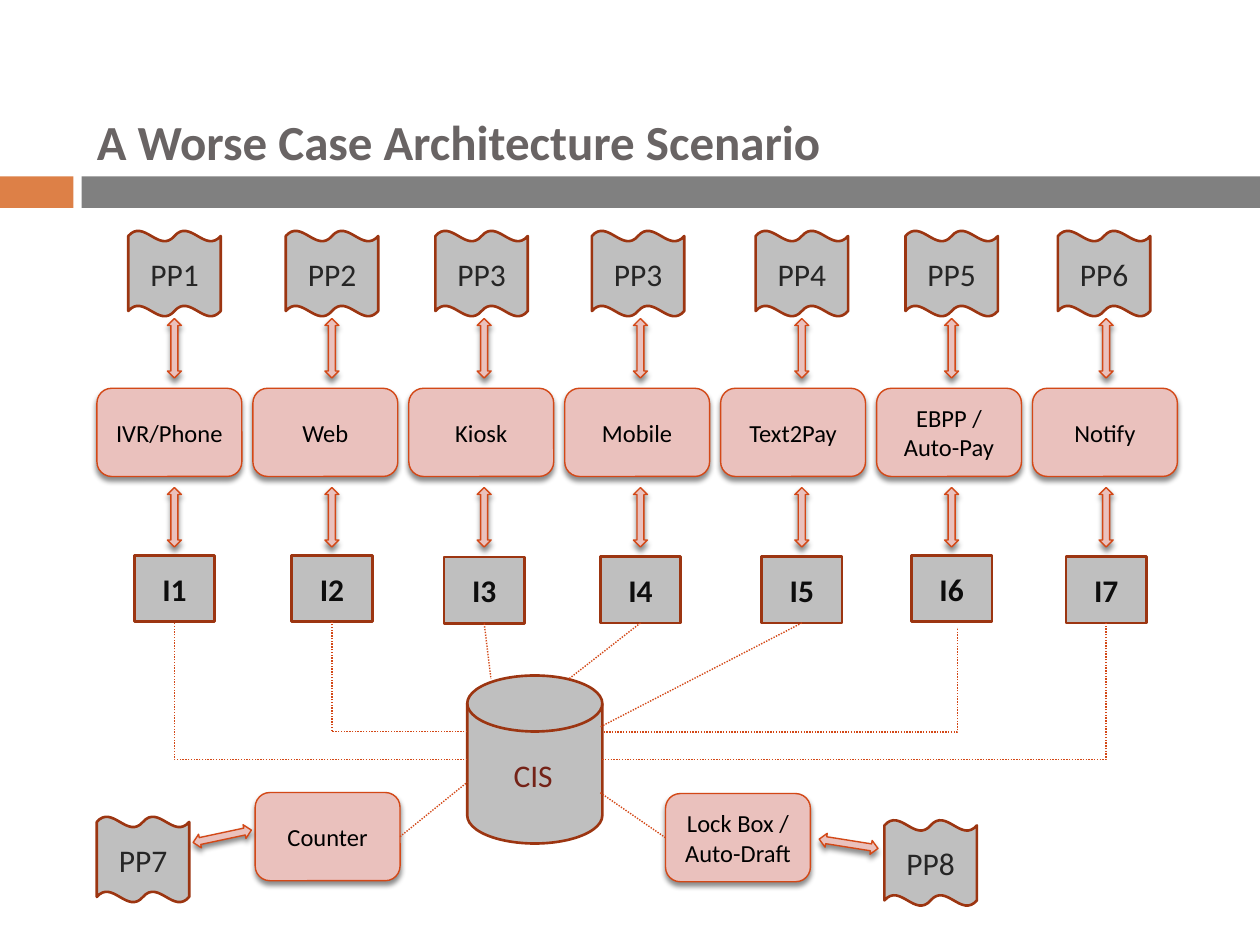
from typing import NamedTuple

from lxml.etree import SubElement
from pptx import Presentation
from pptx.dml.color import RGBColor
from pptx.enum.dml import MSO_LINE_DASH_STYLE as Dash
from pptx.enum.shapes import MSO_AUTO_SHAPE_TYPE as Kind, MSO_CONNECTOR_TYPE as Route
from pptx.enum.text import MSO_ANCHOR as Anchor, MSO_AUTO_SIZE as AutoSize, PP_ALIGN as Align
from pptx.oxml.ns import qn
from pptx.util import Pt

ORANGE = RGBColor(0xDD, 0x80, 0x47)
BAR_GRAY = RGBColor(0x80, 0x80, 0x80)
GRAY = RGBColor(0xBF, 0xBF, 0xBF)
PINK = RGBColor(0xEA, 0xC1, 0xBD)
RUST = RGBColor(0xD3, 0x48, 0x17)
DARK_RUST = RGBColor(0x9C, 0x35, 0x11)
MAROON = RGBColor(0x74, 0x22, 0x17)
TITLE_GRAY = RGBColor(0x69, 0x64, 0x64)
CHARCOAL = RGBColor(0x26, 0x26, 0x26)
NEAR_BLACK = RGBColor(0x0D, 0x0D, 0x0D)
BLACK = RGBColor(0, 0, 0)

THIN, THICK = 0.79, 1.5
CHANNEL_LEFT, CHANNEL_STEP, CHANNEL_WIDTH = 55.4, 89.1, 82.8


class Column(NamedTuple):
    page: str
    channel: str
    interface: str
    center: float
    page_center: float
    interface_top: float


COLUMNS = [
    Column("PP1", "IVR/Phone", "I1", 99.7, 99.7, 317.3),
    Column("PP2", "Web", "I2", 189.7, 189.7, 317.3),
    Column("PP3", "Kiosk", "I3", 276.7, 275.2, 318.3),
    Column("PP3", "Mobile", "I4", 366, 364.6, 318),
    Column("PP4", "Text2Pay", "I5", 458.2, 458.2, 318),
    Column("PP5", "EBPP / Auto-Pay", "I6", 543.8, 543.8, 317.3),
    Column("PP6", "Notify", "I7", 632.1, 630.9, 318),
]


def apply_format(target, values):
    for name, value in values.items():
        setattr(target, name, value)


def write(shape, text, size, color, bold=False, align=Align.CENTER, **frame_values):
    frame = shape.text_frame
    apply_format(frame, {"vertical_anchor": Anchor.MIDDLE, "word_wrap": True, **frame_values})
    paragraph = frame.paragraphs[0]
    paragraph.text = text
    paragraph.alignment = align
    apply_format(paragraph.font, {"name": "Calibri", "size": Pt(size), "bold": bold})
    paragraph.font.color.rgb = color


def add_block(slide, kind, left, top, width, height, fill, line=None, weight=THICK):
    shape = slide.shapes.add_shape(kind, Pt(left), Pt(top), Pt(width), Pt(height))
    shape.fill.solid()
    shape.fill.fore_color.rgb = fill
    if line is None:
        shape.line.fill.background()
    else:
        shape.line.color.rgb = line
        shape.line.width = Pt(weight)
    shape.shadow.inherit = False
    return shape


def add_shadow(shape):
    effects = shape._element.spPr.find(qn("a:effectLst"))
    shadow = SubElement(effects, qn("a:outerShdw"), blurRad=str(Pt(3)), dist=str(Pt(2.4)),
                        dir="5400000", algn="ctr", rotWithShape="0")
    color = SubElement(shadow, qn("a:srgbClr"), val=str(BLACK))
    SubElement(color, qn("a:alpha"), val="45000")


def add_page(slide, text, center, top):
    page = add_block(slide, Kind.DOUBLE_WAVE, center - 26.4, top, 52.8, 49, GRAY, DARK_RUST)
    write(page, text, 18, CHARCOAL)


def add_channel(slide, text, left, top):
    channel = add_block(slide, Kind.ROUNDED_RECTANGLE, left, top, CHANNEL_WIDTH, 50.4,
                        PINK, RUST, THIN)
    add_shadow(channel)
    write(channel, text, 14, BLACK)
    return channel


def add_interface(slide, text, center, top):
    interface = add_block(slide, Kind.RECTANGLE, center - 23, top, 46, 38, GRAY, DARK_RUST)
    write(interface, text, 18, NEAR_BLACK, bold=True)
    return interface


def add_arrow(slide, center, top, rotation=0):
    arrow = add_block(slide, Kind.UP_DOWN_ARROW, center - 4, top, 8, 34, PINK, RUST, THIN)
    add_shadow(arrow)
    arrow.rotation = rotation


def add_dotted(slide, route, start, end):
    connector = slide.shapes.add_connector(route, *(Pt(value) for value in (*start, *end)))
    apply_format(connector.line, {"width": Pt(THIN), "dash_style": Dash.ROUND_DOT})
    connector.line.color.rgb = RUST
    SubElement(connector._element.spPr, qn("a:effectLst"))
    return connector


def add_link(slide, shape, side, end):
    connector = add_dotted(slide, Route.STRAIGHT, end, end)
    connector.begin_connect(shape, side)


def add_corner(slide, start, end):
    connector = add_dotted(slide, Route.ELBOW, start, end)
    connector._element.spPr.find(qn("a:prstGeom")).set("prst", "bentConnector2")


def add_title(slide):
    title = slide.shapes.title
    apply_format(title, {"left": Pt(48.2), "top": Pt(59.8), "width": Pt(671.8), "height": Pt(41.8)})
    write(title, "A Worse Case Architecture Scenario", 28, TITLE_GRAY, True, Align.LEFT,
          auto_size=AutoSize.NONE)


def add_database(slide):
    add_block(slide, Kind.FLOWCHART_MAGNETIC_DISK, 267, 386, 77.2, 96, GRAY, DARK_RUST)
    label = slide.shapes.add_textbox(Pt(286.4), Pt(428.6), Pt(39), Pt(29))
    write(label, "CIS", 18, MAROON, align=Align.LEFT, vertical_anchor=Anchor.TOP,
          word_wrap=False, auto_size=AutoSize.SHAPE_TO_FIT_TEXT)


def add_columns(slide):
    interfaces = {}
    for index, column in enumerate(COLUMNS):
        add_page(slide, column.page, column.page_center, 131.8)
        add_channel(slide, column.channel, CHANNEL_LEFT + index * CHANNEL_STEP, 221.9)
        for top in (182, 278.6):
            add_arrow(slide, column.center, top)
        interfaces[column.interface] = add_interface(
            slide, column.interface, column.center, column.interface_top)
    return interfaces


def main():
    presentation = Presentation()
    apply_format(presentation, {"slide_width": Pt(720), "slide_height": Pt(540)})
    slide = presentation.slides.add_slide(presentation.slide_layouts[5])

    add_block(slide, Kind.RECTANGLE, 0, 100.8, 42, 18, ORANGE)
    add_block(slide, Kind.RECTANGLE, 46.6, 100.8, 673.4, 18, BAR_GRAY)
    add_title(slide)
    add_database(slide)
    interfaces = add_columns(slide)

    counter = add_channel(slide, "Counter", 145.8, 452.9)
    lock_box = add_channel(slide, "Lock Box / Auto-Draft", 380.3, 453.5)
    add_page(slide, "PP7", 81.7, 466.6)
    add_page(slide, "PP8", 531.8, 468.6)
    add_arrow(slide, 127, 460.9, 78)
    add_arrow(slide, 484.9, 465.2, 99)

    for shape, side, end in [
        (interfaces["I3"], 2, (280.6, 388)),
        (interfaces["I4"], 2, (325, 388)),
        (interfaces["I5"], 2, (343, 415.4)),
        (counter, 3, (267, 447)),
        (lock_box, 1, (343, 453)),
    ]:
        add_link(slide, shape, side, end)

    for start, end in [
        ((267, 434), (99.7, 355.3)),
        ((267, 418.2), (189.7, 355.3)),
        ((344.9, 418.2), (547.2, 358.6)),
        ((344.2, 434), (632.1, 356)),
    ]:
        add_corner(slide, start, end)

    presentation.save("out.pptx")


if __name__ == "__main__":
    main()
